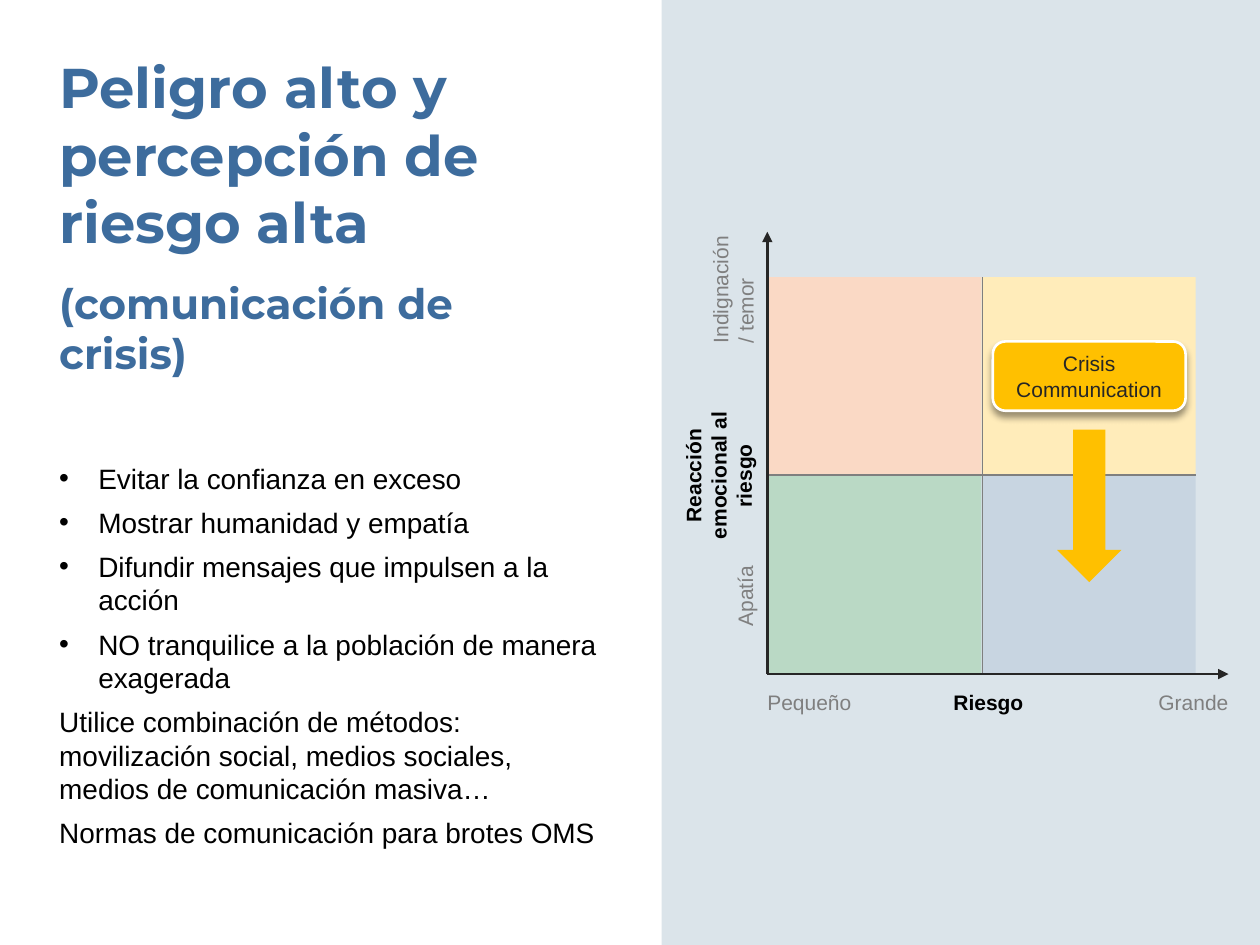
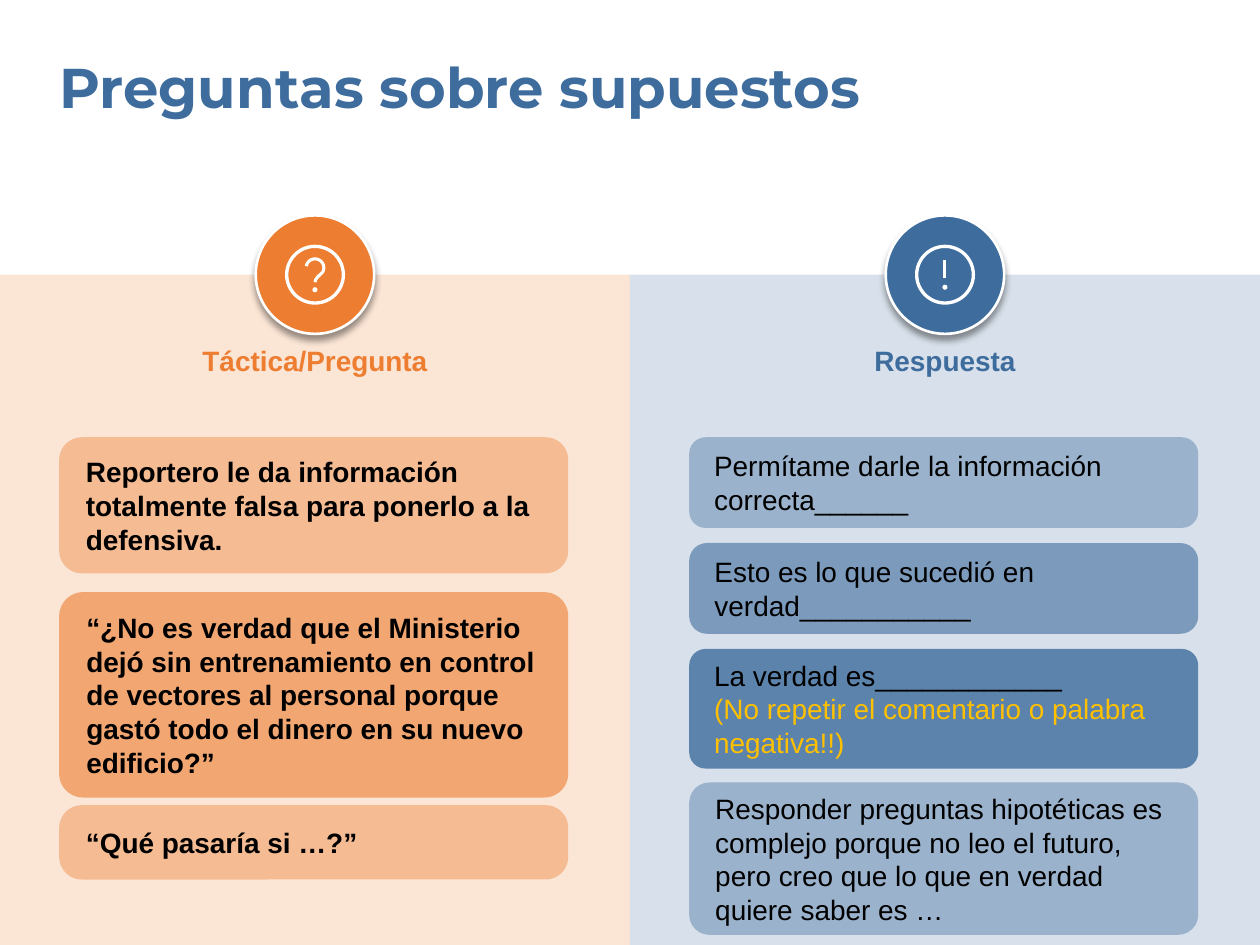
import math
from dataclasses import dataclass

from lxml import etree
from pptx import Presentation
from pptx import util as u
from pptx.dml.color import RGBColor
from pptx.enum import shapes, text
from pptx.oxml.ns import qn

SHAPE = shapes.MSO_SHAPE
ALIGN = text.PP_ALIGN
ANCHOR = text.MSO_ANCHOR


@dataclass(frozen=True)
class Theme:
    """Colours, fonts, type sizes and the scale of 100 px to the inch."""
    blue: str = "3D6C9D"
    orange: str = "ED7D31"
    yellow: str = "FFC000"
    white: str = "FFFFFF"
    black: str = "000000"
    ink: str = "262626"
    grey: str = "7F7F7F"
    panel: str = "DBE4EA"
    quadrants: tuple = (("FAD9C5", "FFECBA"), ("BAD9C5", "C8D5E1"))
    heading_font: str = "Montserrat"
    body_font: str = "Arial"
    title_size: int = 32
    subtitle_size: int = 24
    body_size: int = 16
    label_size: int = 12
    margin: int = 47
    px: int = 9144


class Painter:
    """Draws styled elements on the current slide."""

    def __init__(self, deck, theme):
        self.deck = deck
        self.theme = theme
        self.page = None

    def emu(self, *lengths):
        return [u.Emu(round(length * self.theme.px)) for length in lengths]

    def start_page(self, layout, title, width, height):
        self.page = self.deck.slides.add_slide(self.deck.slide_layouts[layout])
        theme = self.theme
        self.place(self.page.shapes.title, theme.margin, 42, width, height)
        self.set_text(self.page.shapes.title, title, theme.title_size, theme.blue,
                      bold=True, font=theme.heading_font)

    def place(self, box, *frame):
        box.left, box.top, box.width, box.height = self.emu(*frame)

    def set_text(self, box, words, size, color, bold=False, align=ALIGN.LEFT,
                 font=None, anchor=ANCHOR.TOP, insets=(0, 0)):
        frame = box.text_frame
        frame.text = words
        frame.word_wrap = True
        frame.auto_size = text.MSO_AUTO_SIZE.NONE
        frame.vertical_anchor = anchor
        side, edge = self.emu(*insets)
        frame.margin_left = frame.margin_right = side
        frame.margin_top = frame.margin_bottom = edge
        for para in frame.paragraphs:
            para.alignment = align
            para.space_before = u.Pt(0)
            for span in para.runs:
                span.font.name = font or self.theme.body_font
                span.font.size = u.Pt(size)
                span.font.bold = bold
                span.font.color.rgb = RGBColor.from_string(color)

    def label(self, words, frame, size, color, turn=0, **style):
        box = self.page.shapes.add_textbox(*self.emu(*frame))
        box.rotation = turn
        self.set_text(box, words, size, color, **style)

    def body(self, bullets, notes, *frame):
        box = self.page.placeholders[1]
        self.place(box, *frame)
        self.set_text(box, "\n".join(bullets + notes), self.theme.body_size, self.theme.black)
        for index, para in enumerate(box.text_frame.paragraphs):
            para.space_before = u.Pt(6 if index else 0)
            bulleted = index < len(bullets)
            indent = self.emu(31 if bulleted else 0)[0]
            props = para._p.get_or_add_pPr()
            props.set("marL", str(indent))
            props.set("indent", str(-indent))
            if bulleted:
                etree.SubElement(props, qn("a:buChar"), char="•")
            else:
                etree.SubElement(props, qn("a:buNone"))

    def shape(self, kind, frame, fill=None, opacity=100, line=None, weight=1.5, radius=None):
        box = self.page.shapes.add_shape(kind, *self.emu(*frame))
        box.shadow.inherit = False
        if radius:
            box.adjustments[0] = radius / min(frame[2:])
        self.fill(box, fill, opacity)
        self.outline(box, line, weight)
        return box

    def fill(self, box, color, opacity=100):
        if color is None:
            box.fill.background()
            return
        box.fill.solid()
        box.fill.fore_color.rgb = RGBColor.from_string(color)
        if opacity < 100:
            tint = box.element.spPr.find(qn("a:solidFill"))[0]
            etree.SubElement(tint, qn("a:alpha"), val=str(opacity * 1000))

    def outline(self, box, color, weight):
        if color is None:
            box.line.fill.background()
            return
        box.line.color.rgb = RGBColor.from_string(color)
        box.line.width = u.Pt(weight)

    def drop_shadow(self, box):
        effects = box.element.spPr.find(qn("a:effectLst"))
        shadow = etree.SubElement(
            effects, qn("a:outerShdw"), blurRad=str(u.Pt(4)), dist=str(u.Pt(3)),
            dir="5400000", algn="t", rotWithShape="0")
        tint = etree.SubElement(shadow, qn("a:srgbClr"), val=self.theme.black)
        etree.SubElement(tint, qn("a:alpha"), val="40000")

    def line(self, start, end, color, weight, arrow=False):
        rule = self.page.shapes.add_connector(
            shapes.MSO_CONNECTOR.STRAIGHT, *self.emu(*start, *end))
        self.outline(rule, color, weight)
        if arrow:
            etree.SubElement(rule.line._get_or_add_ln(), qn("a:tailEnd"), type="triangle")
        etree.SubElement(rule.element.spPr, qn("a:effectLst"))

    def stroke(self, points, color, weight):
        corners = [self.emu(*point) for point in points]
        builder = self.page.shapes.build_freeform(*corners[0])
        builder.add_line_segments(corners[1:], close=False)
        curve = builder.convert_to_shape()
        curve.shadow.inherit = False
        self.fill(curve, None)
        self.outline(curve, color, weight)

    def disc(self, x, y, radius, fill=None, line=None, weight=1.5):
        frame = (x - radius, y - radius, 2 * radius, 2 * radius)
        return self.shape(SHAPE.OVAL, frame, fill, line=line, weight=weight)

    def badge(self, x, y, color, mark, dot):
        white = self.theme.white
        self.drop_shadow(self.disc(x, y, 47, color, white))
        self.disc(x, y, 22.5, line=white, weight=1.9)
        self.stroke([(x + dx, y + dy) for dx, dy in mark], white, 1.75)
        self.disc(x, y + dot, 2, white)

    def card(self, words, frame, color, opacity, radius, bold):
        box = self.shape(SHAPE.ROUNDED_RECTANGLE, frame, color, opacity, radius=radius)
        self.set_text(box, words, self.theme.body_size, self.theme.black, bold,
                      anchor=ANCHOR.MIDDLE, insets=(16, 8))
        return box


def draw_crisis(painter):
    """Slide on high danger with high perceived risk."""
    theme = painter.theme
    painter.start_page(1, "Peligro alto y percepción de riesgo alta", 452, 162)
    painter.shape(SHAPE.RECTANGLE, (525, 0, 475, 750), theme.panel)
    painter.body(
        ["Evitar la confianza en exceso",
         "Mostrar humanidad y empatía",
         "Difundir mensajes que impulsen a la acción",
         "NO tranquilice a la población de manera exagerada"],
        ["Utilice combinación de métodos: movilización social, medios sociales, "
         "medios de comunicación masiva…",
         "Normas de comunicación para brotes OMS"],
        theme.margin, 366, 427, 311)

    left, top, width, height = 609, 220, 170, 157
    for row, colors in enumerate(theme.quadrants):
        for column, color in enumerate(colors):
            painter.shape(SHAPE.RECTANGLE,
                          (left + column * width, top + row * height, width, height), color)

    size = theme.label_size
    painter.label("Pequeño", (609, 547, 72, 20), size, theme.grey)
    painter.label("Grande", (911, 547, 64, 20), size, theme.grey, align=ALIGN.RIGHT)
    painter.label("Riesgo", (738, 547, 93, 20), size, theme.black, bold=True,
                  align=ALIGN.CENTER)
    painter.label("Reacción emocional al riesgo", (500, 347, 141, 61), size, theme.black,
                  turn=270, bold=True, align=ALIGN.CENTER)
    painter.label("Indignación / temor", (526, 219, 89, 18), size, theme.grey, turn=270)
    painter.label("Apatía", (541, 489, 89, 9), size, theme.grey, turn=270, align=ALIGN.RIGHT)

    origin = (left, 535)
    painter.line((780, 535), (780, top), theme.grey, 0.75)
    painter.line((left, top + height), (left + 2 * width, top + height), theme.grey, 0.75)
    painter.line(origin, (left, 184), theme.ink, 1.5, arrow=True)
    painter.line(origin, (975, 535), theme.ink, 1.5, arrow=True)

    crisis = painter.shape(SHAPE.ROUNDED_RECTANGLE, (788, 271, 153, 55), theme.yellow,
                           line=theme.white, radius=10)
    painter.drop_shadow(crisis)
    painter.set_text(crisis, "Crisis\nCommunication", size, theme.ink, align=ALIGN.CENTER,
                     anchor=ANCHOR.MIDDLE, insets=(10, 5))
    painter.shape(SHAPE.DOWN_ARROW, (839, 341, 51, 121), theme.yellow)
    painter.label("(comunicación de crisis)", (theme.margin, 220, 391, 81),
                  theme.subtitle_size, theme.blue, bold=True, font=theme.heading_font)


def draw_questions(painter):
    """Slide pairing hypothetical questions with answers."""
    theme = painter.theme
    painter.start_page(5, "Preguntas sobre supuestos", 902, 54)
    hook = [(7 * math.cos(math.radians(angle)), 7 * math.sin(math.radians(angle)) - 5.5)
            for angle in range(190, 391, 10)]
    question = hook + [(2, 2), (0.5, 4), (0, 6)]
    exclamation = [(0, -12), (0, 3)]
    columns = [
        ("Táctica/Pregunta", theme.orange, question, 12, True, [
            ("Reportero le da información totalmente falsa para ponerlo a la defensiva.",
             347, 108, 40, 18),
            ("“¿No es verdad que el Ministerio dejó sin entrenamiento en control de vectores "
             "al personal porque gastó todo el dinero en su nuevo edificio?”",
             470, 163, 60, 19),
            ("“Qué pasaría si …?”", 639, 59, 40, 18)]),
        ("Respuesta", theme.blue, exclamation, 10, False, [
            ("Permítame darle la información correcta______", 347, 72, 40, 13),
            ("Esto es lo que sucedió en verdad___________", 431, 72, 60, 14),
            ("La verdad es____________\n(No repetir el comentario o palabra negativa!!)",
             515, 95, 80, 13),
            ("Responder preguntas hipotéticas es complejo porque no leo el futuro, "
             "pero creo que lo que en verdad quiere saber es …", 621, 121, 40, 16)]),
    ]
    width = 500
    for column, (heading, color, mark, dot, bold, cards) in enumerate(columns):
        left = column * width
        painter.shape(SHAPE.RECTANGLE, (left, 218, width, 532), color, 20)
        painter.badge(left + width / 2, 218, color, mark, dot)
        painter.label(heading, (left, 273, width, 27), theme.body_size, color,
                      bold=True, align=ALIGN.CENTER)
        for words, top, height, opacity, radius in cards:
            box = painter.card(words, (left + theme.margin, top, 404, height),
                               color, opacity, radius, bold)
            for para in box.text_frame.paragraphs[1:]:
                para.runs[0].font.color.rgb = RGBColor.from_string(theme.yellow)


def main():
    """Build and save the deck."""
    theme = Theme()
    deck = Presentation()
    deck.slide_width = u.Emu(1000 * theme.px)
    deck.slide_height = u.Emu(750 * theme.px)
    painter = Painter(deck, theme)
    draw_crisis(painter)
    draw_questions(painter)
    deck.save("out.pptx")


if __name__ == "__main__":
    main()
